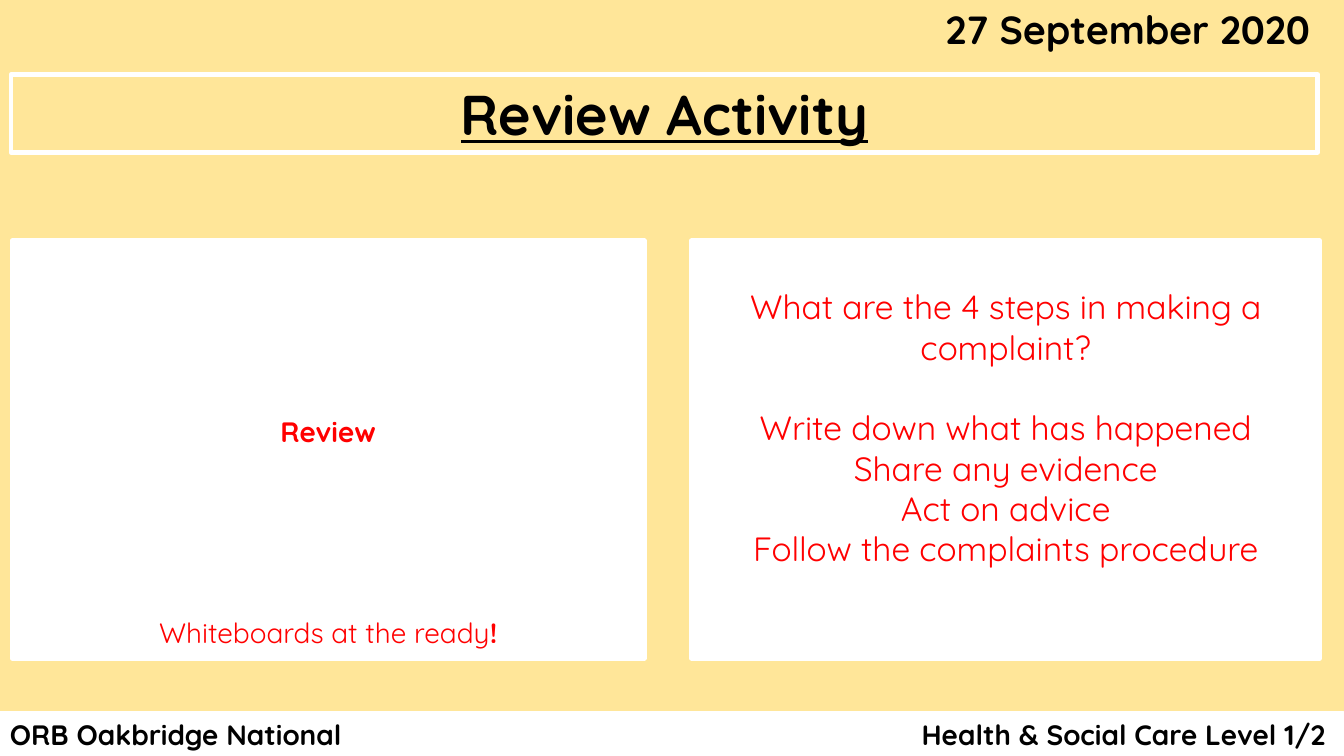
from dataclasses import dataclass

from pptx import Presentation
from pptx.dml.color import RGBColor
from pptx.enum.shapes import MSO_SHAPE
from pptx.enum.text import MSO_ANCHOR, PP_ALIGN
from pptx.util import Inches, Pt

RECTANGLE = MSO_SHAPE.RECTANGLE
TOP, MIDDLE = MSO_ANCHOR.TOP, MSO_ANCHOR.MIDDLE
LEFT, CENTER, RIGHT = PP_ALIGN.LEFT, PP_ALIGN.CENTER, PP_ALIGN.RIGHT


@dataclass(frozen=True)
class Theme:
    font: str = "Quicksand"
    sand: RGBColor = RGBColor(0xFF, 0xE6, 0x99)
    white: RGBColor = RGBColor(0xFF, 0xFF, 0xFF)
    black: RGBColor = RGBColor(0, 0, 0)
    red: RGBColor = RGBColor(0xFF, 0, 0)
    title: int = 40
    date: int = 28
    question: int = 24
    body: int = 20
    thin: float = 0.75
    thick: float = 3.5


theme = Theme()
deck = Presentation()
deck.slide_width, deck.slide_height = Inches(13.33), Inches(7.5)
page = deck.slides.add_slide(deck.slide_layouts[6])
page.background.fill.solid()
page.background.fill.fore_color.rgb = theme.sand


def add_panel(left, top, width, height, line_width, filled=True):
    box = page.shapes.add_shape(
        RECTANGLE, Inches(left), Inches(top), Inches(width), Inches(height))
    box.shadow.inherit = False
    if filled:
        box.fill.solid()
        box.fill.fore_color.rgb = theme.white
    else:
        box.fill.background()
    box.line.color.rgb = theme.white
    box.line.width = Pt(line_width)
    return box


def write(box, lines, size, color, align, bold=False, anchor=MIDDLE):
    frame = box.text_frame
    frame.word_wrap = True
    frame.vertical_anchor = anchor
    frame.text = "\n".join(lines)
    for para in frame.paragraphs:
        para.alignment = align
        for span in para.runs:
            span.font.name = theme.font
            span.font.size = Pt(size)
            span.font.bold = bold
            span.font.color.rgb = color
    return frame


# Footer
course = add_panel(0, 7.06, 5.82, 0.44, theme.thin)
write(course, ["ORB Oakbridge National"], theme.body, theme.black, LEFT, bold=True)
subject = add_panel(5.82, 7.06, 7.51, 0.44, theme.thin)
subject_frame = write(subject, ["Health & Social Care Level 1/2"],
                      theme.body, theme.black, RIGHT, bold=True)
subject_frame.margin_right = Inches(0.18)

# Title
title = add_panel(0.11, 0.74, 12.96, 0.77, theme.thick, filled=False)
title_frame = write(title, ["Review Activity"], theme.title, theme.black, CENTER, bold=True)
title_frame.paragraphs[0].runs[0].font.underline = True

# Review card
review = add_panel(0.12, 2.39, 6.27, 4.14, theme.thick)
review_frame = write(review, ["Review", "Whiteboards at the ready"],
                     theme.body, theme.red, CENTER, anchor=TOP)
review_frame.margin_top = Inches(1.72)
heading, prompt = review_frame.paragraphs
heading.runs[0].font.bold = True
prompt.space_before = Pt(120)
mark = prompt.add_run()
mark.text = "!"
mark.font.name = theme.font
mark.font.size = Pt(theme.body)
mark.font.bold = True
mark.font.color.rgb = theme.red

# Question card
question = add_panel(6.86, 2.39, 6.23, 4.14, theme.thick)
question_frame = write(question, [
    "What are the 4 steps in making a complaint?",
    "Write down what has happened",
    "Share any evidence",
    "Act on advice",
    "Follow the complaints procedure",
], theme.question, theme.red, CENTER, anchor=TOP)
question_frame.margin_top = Inches(0.45)
question_frame.paragraphs[1].space_before = Pt(28.8)

# Date
date = page.shapes.add_textbox(Inches(8.04), Inches(0), Inches(5.05), Inches(0.57))
write(date, ["27 September 2020"], theme.date, theme.black, RIGHT, bold=True, anchor=TOP)

deck.save("out.pptx")
